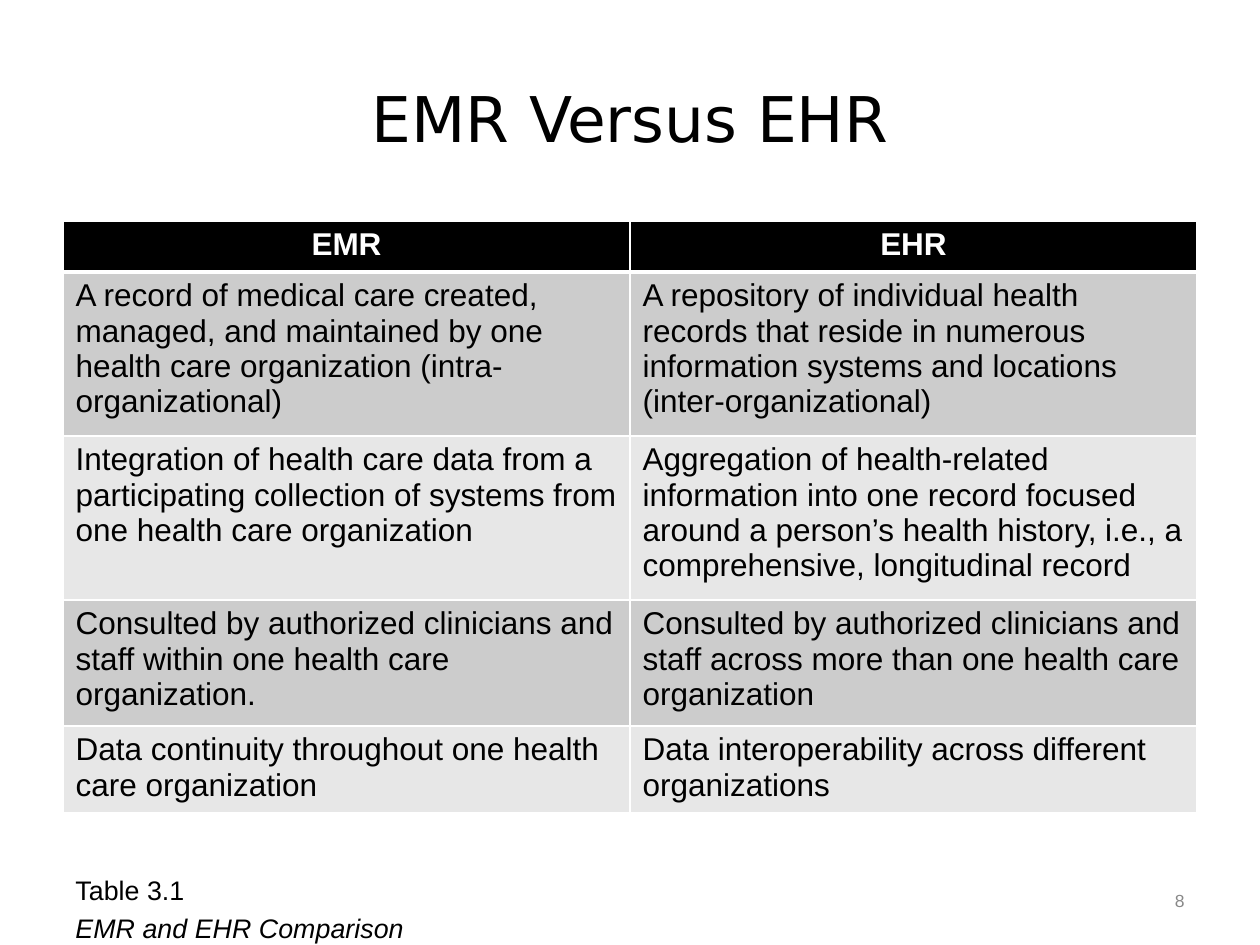
"""Build the EMR versus EHR comparison slide."""
from dataclasses import dataclass

from lxml.etree import SubElement
from pptx import Presentation
from pptx.dml.color import RGBColor
from pptx.enum.text import MSO_ANCHOR, PP_ALIGN
from pptx.oxml.ns import qn
from pptx.util import Emu, Pt

EMU_PER_PX = 914400 / 126


@dataclass(frozen=True)
class Theme:
    ink: str = "000000"
    paper: str = "FFFFFF"
    bands: tuple[str, str] = ("CCCCCC", "E7E7E7")
    muted: str = "898989"
    title_font: str = "DejaVu Sans"
    body_font: str = "Arial"
    title_size: float = 36
    table_size: float = 18
    caption_size: float = 15.3
    number_size: float = 10
    caption_gap: float = 3
    rule_width: float = 1
    header_rule_width: float = 3


@dataclass(frozen=True)
class Style:
    font: str
    size: float
    color: str
    bold: bool = False
    italic: bool = False
    align: PP_ALIGN = PP_ALIGN.LEFT


@dataclass(frozen=True)
class Label:
    left: int
    top: int
    width: int
    height: int
    lines: tuple[tuple[str, Style], ...]
    anchor: MSO_ANCHOR = MSO_ANCHOR.MIDDLE


@dataclass(frozen=True)
class Comparison:
    emr: str
    ehr: str
    height: int


THEME = Theme()
TITLE = Style(THEME.title_font, THEME.title_size, THEME.ink, align=PP_ALIGN.CENTER)
HEADING = Style(THEME.body_font, THEME.table_size, THEME.paper, bold=True, align=PP_ALIGN.CENTER)
BODY = Style(THEME.body_font, THEME.table_size, THEME.ink)
CAPTION = Style(THEME.body_font, THEME.caption_size, THEME.ink)
CAPTION_NAME = Style(THEME.body_font, THEME.caption_size, THEME.ink, italic=True)
NUMBER = Style(THEME.body_font, THEME.number_size, THEME.muted, align=PP_ALIGN.RIGHT)

LABELS = (
    Label(63, 38, 1134, 158, (("EMR Versus EHR", TITLE),)),
    Label(63, 868, 1052, 73,
          (("Table 3.1", CAPTION), ("EMR and EHR Comparison", CAPTION_NAME)), MSO_ANCHOR.TOP),
    Label(1126, 863, 71, 76, (("8", NUMBER),)),
)

COMPARISONS = (
    Comparison("EMR", "EHR", 51),
    Comparison(
        "A record of medical care created, managed, and maintained by one "
        "health care organization (intra-organizational)",
        "A repository of individual health records that reside in numerous "
        "information systems and locations (inter-organizational)", 164),
    Comparison(
        "Integration of health care data from a participating collection of "
        "systems from one health care organization",
        "Aggregation of health-related information into one record focused around "
        "a person’s health history, i.e., a comprehensive, longitudinal record", 164),
    Comparison(
        "Consulted by authorized clinicians and staff within one health care organization.",
        "Consulted by authorized clinicians and staff across more than one "
        "health care organization", 126),
    Comparison(
        "Data continuity throughout one health care organization",
        "Data interoperability across different organizations", 87),
)


def px(length: int) -> Emu:
    """Convert pixels to EMU."""
    return Emu(round(length * EMU_PER_PX))


def write(paragraph, text: str, style: Style) -> None:
    """Fill a paragraph and format its runs."""
    paragraph.text = text
    paragraph.alignment = style.align
    for run in paragraph.runs:
        run.font.name = style.font
        run.font.size = Pt(style.size)
        run.font.bold = style.bold
        run.font.italic = style.italic
        run.font.color.rgb = RGBColor.from_string(style.color)


def draw_label(slide, label: Label) -> None:
    """Place a text box with one styled paragraph per line."""
    frame = slide.shapes.add_textbox(
        px(label.left), px(label.top), px(label.width), px(label.height)).text_frame
    frame.word_wrap = True
    frame.vertical_anchor = label.anchor
    for index, (text, style) in enumerate(label.lines):
        paragraph = frame.add_paragraph() if index else frame.paragraphs[0]
        write(paragraph, text, style)
        if index:
            paragraph.space_before = Pt(THEME.caption_gap)


def rule_cell(cell, top: float, bottom: float) -> None:
    """Draw the four borders of a cell ahead of its fill."""
    properties = cell._tc.get_or_add_tcPr()
    widths = {"L": THEME.rule_width, "R": THEME.rule_width, "T": top, "B": bottom}
    for side, width in widths.items():
        line = SubElement(properties, qn(f"a:ln{side}"), w=str(Pt(width)))
        color = SubElement(SubElement(line, qn("a:solidFill")), qn("a:srgbClr"))
        color.set("val", THEME.paper)


def draw_comparison(slide, left: int, top: int, width: int) -> None:
    """Draw the header and the banded comparison rows."""
    height = sum(comparison.height for comparison in COMPARISONS)
    table = slide.shapes.add_table(
        len(COMPARISONS), 2, px(left), px(top), px(width), px(height)).table
    for column in table.columns:
        column.width = px(width // 2)
    for index, comparison in enumerate(COMPARISONS):
        table.rows[index].height = px(comparison.height)
        fill = THEME.bands[(index - 1) % 2] if index else THEME.ink
        upper = THEME.header_rule_width if index == 1 else THEME.rule_width
        lower = THEME.rule_width if index else THEME.header_rule_width
        for cell, text in zip(table.rows[index].cells, (comparison.emr, comparison.ehr)):
            write(cell.text_frame.paragraphs[0], text, BODY if index else HEADING)
            rule_cell(cell, upper, lower)
            cell.fill.solid()
            cell.fill.fore_color.rgb = RGBColor.from_string(fill)


def main() -> None:
    """Assemble and save the slide."""
    deck = Presentation()
    deck.slide_width, deck.slide_height = px(1260), px(945)
    slide = deck.slides.add_slide(deck.slide_layouts[6])
    draw_comparison(slide, 63, 221, 1134)
    for label in LABELS:
        draw_label(slide, label)
    deck.save("out.pptx")


if __name__ == "__main__":
    main()
